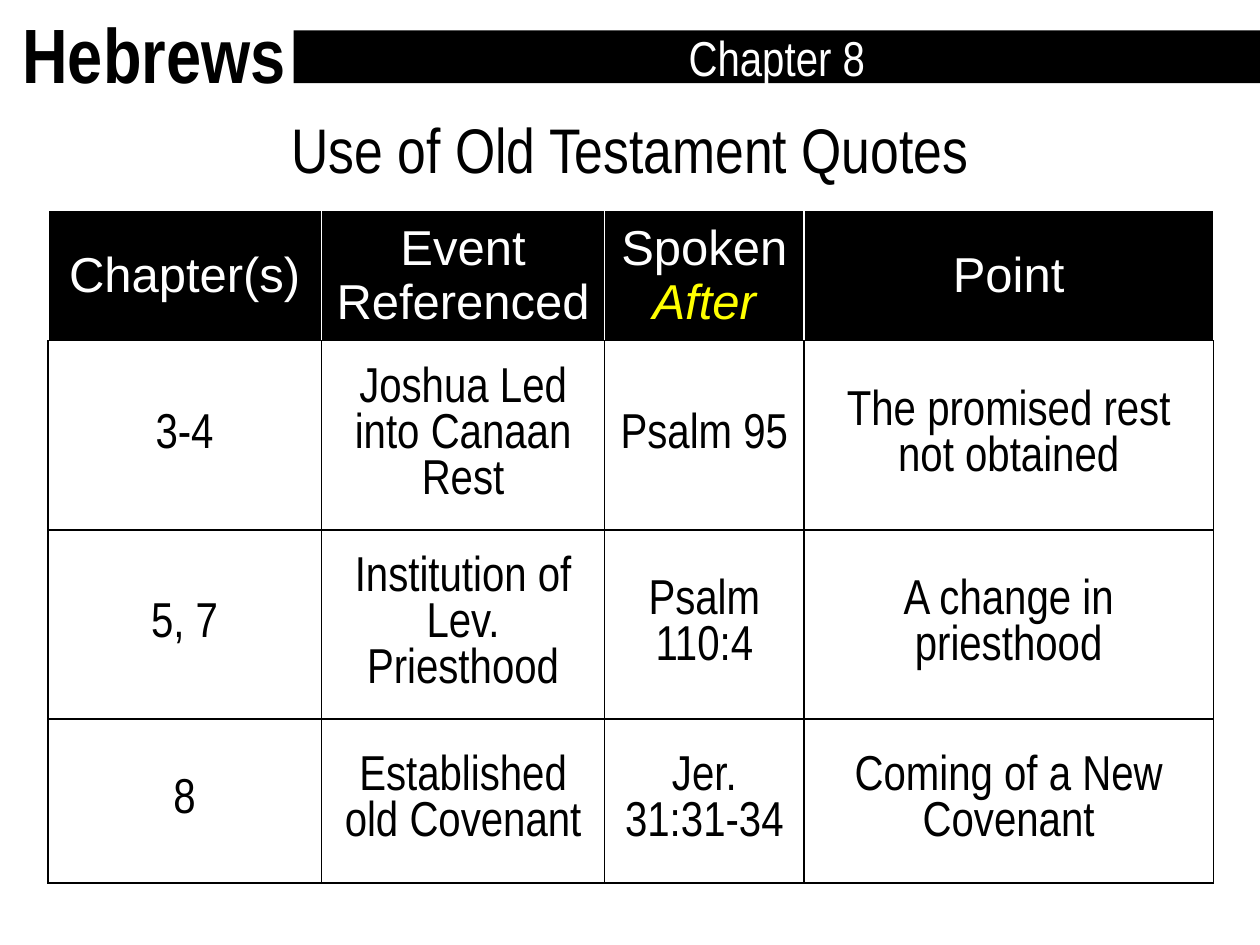
from lxml import etree
from pptx import Presentation
from pptx.dml.color import RGBColor
from pptx.enum.shapes import MSO_SHAPE as Shape
from pptx.enum.text import MSO_ANCHOR as Anchor, MSO_AUTO_SIZE as AutoSize, PP_ALIGN as Align
from pptx.oxml.ns import qn
from pptx.util import Inches, Pt

BLACK = RGBColor(0, 0, 0)
WHITE = RGBColor(255, 255, 255)
YELLOW = RGBColor(255, 255, 0)
BODY_FONT = "Arial Narrow"
HEADER_FONT = "Arial"

COLUMN_WIDTHS = [2.17, 2.25, 1.58, 3.25]
ROW_HEIGHTS = [1.03, 1.5, 1.5, 1.3]
ROWS = [
    ["Chapter(s)", "Event Referenced", "Spoken ", "Point"],
    ["3-4", "Joshua Led into Canaan Rest", "Psalm 95", "The promised rest not obtained"],
    ["5, 7", "Institution of Lev. Priesthood", "Psalm 110:4", "A change in priesthood"],
    ["8", "Established old Covenant", "Jer. 31:31-34", "Coming of a New Covenant"],
]


class SlideBuilder:
    def __init__(self, deck):
        self.page = deck.slides.add_slide(deck.slide_layouts[5])

    def set_text(self, frame, text, size, color=BLACK, font=BODY_FONT, align=Align.CENTER, bold=False):
        para = frame.paragraphs[0]
        para.text = text
        para.alignment = align
        para.font.name = font
        para.font.size = Pt(size)
        para.font.bold = bold
        para.font.color.rgb = color

    def title(self, text, left, top, width, height):
        box = self.page.shapes.title
        box.left, box.top = Inches(left), Inches(top)
        box.width, box.height = Inches(width), Inches(height)
        frame = box.text_frame
        frame.auto_size = AutoSize.SHAPE_TO_FIT_TEXT
        frame.vertical_anchor = Anchor.TOP
        self.set_text(frame, text, 36)

    def label(self, text, left, top, width, height):
        box = self.page.shapes.add_textbox(Inches(left), Inches(top), Inches(width), Inches(height))
        frame = box.text_frame
        frame.word_wrap = True
        frame.auto_size = AutoSize.SHAPE_TO_FIT_TEXT
        self.set_text(frame, text, 44, align=Align.LEFT, bold=True)

    def bar(self, text, left, top, width, height):
        box = self.page.shapes.add_shape(
            Shape.RECTANGLE, Inches(left), Inches(top), Inches(width), Inches(height))
        box.shadow.inherit = False
        box.fill.solid()
        box.fill.fore_color.rgb = BLACK
        box.line.fill.background()
        box.text_frame.vertical_anchor = Anchor.MIDDLE
        self.set_text(box.text_frame, text, 28, WHITE)

    def table(self, rows, left, top, widths, heights):
        table = self.page.shapes.add_table(
            len(rows), len(widths), Inches(left), Inches(top),
            Inches(sum(widths)), Inches(sum(heights))).table
        for column, width in zip(table.columns, widths):
            column.width = Inches(width)
        for row, height in zip(table.rows, heights):
            row.height = Inches(height)
        for r, texts in enumerate(rows):
            for c, text in enumerate(texts):
                self.cell(table.cell(r, c), text, header=r == 0)
        return table

    def cell(self, cell, text, header):
        cell.vertical_anchor = Anchor.MIDDLE
        cell.fill.solid()
        cell.fill.fore_color.rgb = BLACK if header else WHITE
        if header:
            self.set_text(cell.text_frame, text, 28, WHITE, HEADER_FONT)
        else:
            self.set_text(cell.text_frame, text, 28)
        side_color = WHITE if header else BLACK
        self.borders(cell, L=side_color, R=side_color, T=side_color, B=BLACK)

    def borders(self, cell, **colors):
        """Draw one-point cell borders; the schema wants them in L, R, T, B order before the fill."""
        properties = cell._tc.get_or_add_tcPr()
        for index, (side, color) in enumerate(colors.items()):
            line = etree.Element(qn(f"a:ln{side}"), w=str(Pt(1)))
            fill = etree.SubElement(line, qn("a:solidFill"))
            etree.SubElement(fill, qn("a:srgbClr"), val=str(color))
            properties.insert(index, line)


def main():
    deck = Presentation()
    deck.slide_width, deck.slide_height = Inches(10), Inches(7.5)
    builder = SlideBuilder(deck)

    builder.title("Use of Old Testament Quotes", 0, 0.83, 10, 0.71)
    table = builder.table(ROWS, 0.38, 1.67, COLUMN_WIDTHS, ROW_HEIGHTS)
    span = table.cell(0, 2).text_frame.paragraphs[0].add_run()
    span.text = "After"
    span.font.italic = True
    span.font.color.rgb = YELLOW

    builder.label("Hebrews", 0.08, 0, 9.92, 0.84)
    builder.bar("Chapter 8", 2.33, 0.24, 7.67, 0.42)
    deck.save("out.pptx")


if __name__ == "__main__":
    main()
